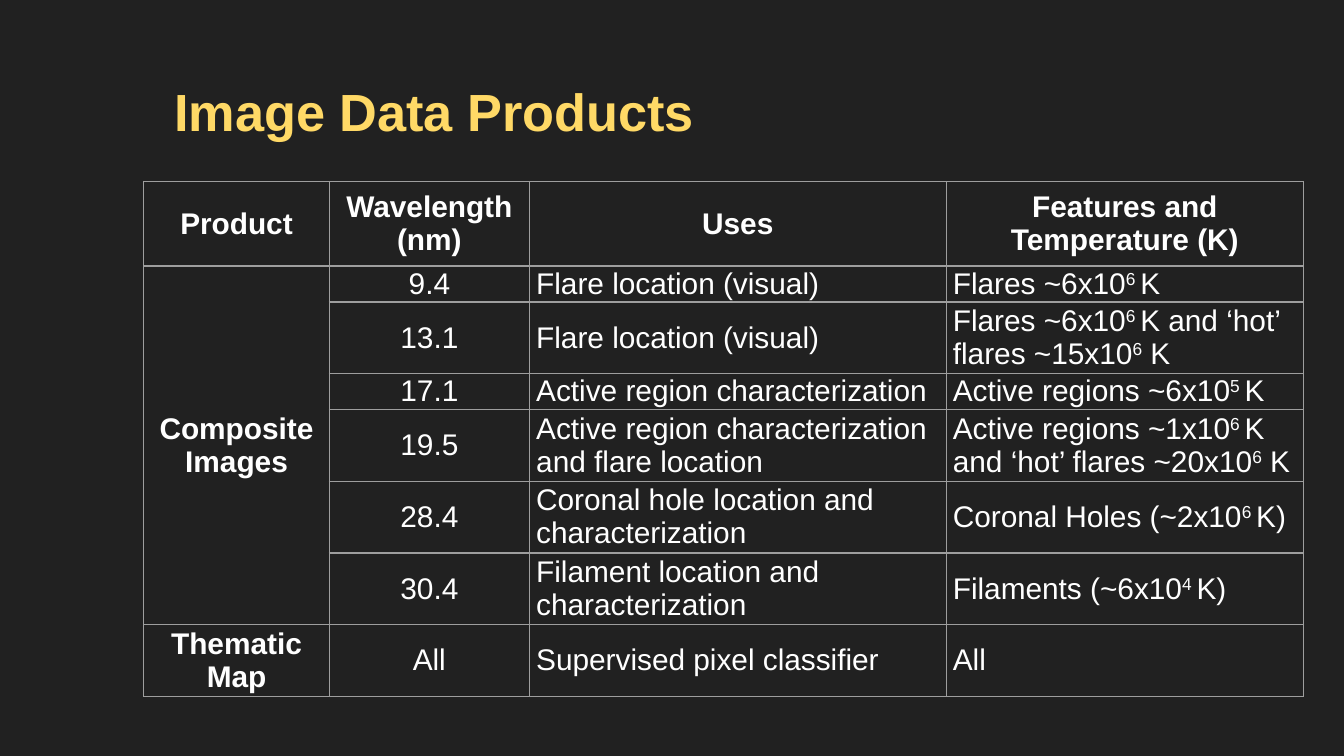
"""Build the slide with the table of image data products."""
from lxml.etree import SubElement, Element
from pptx import Presentation
from pptx.dml.color import RGBColor
from pptx.enum.text import MSO_ANCHOR as Anchor, PP_ALIGN as Align
from pptx.oxml.ns import qn
from pptx.util import Inches, Pt

WHITE, GOLD, DARK, GREY = "FFFFFF", "FFD966", "212121", "9E9E9E"
LINE_HEIGHT = 2.96 / 12
COLUMN_WIDTHS = [1.38, 1.49, 3.1, 2.66]
ROW_LINES = [1, 2, 1, 2, 2, 2, 2]
ROWS = [
    ["Product", "Wavelength\n(nm)", "Uses", "Features and Temperature (K)"],
    ["Composite Images", "9.4", "Flare location (visual)", "Flares ~6x10^6 ^K"],
    ["", "13.1", "Flare location (visual)", "Flares ~6x10^6 ^K and ‘hot’ flares ~15x10^6^ K"],
    ["", "17.1", "Active region characterization", "Active regions ~6x10^5 ^K"],
    ["", "19.5", "Active region characterization and flare location",
     "Active regions ~1x10^6 ^K and ‘hot’ flares ~20x10^6^ K"],
    ["", "28.4", "Coronal hole location and characterization", "Coronal Holes (~2x10^6 ^K)"],
    ["", "30.4", "Filament location and characterization", "Filaments (~6x10^4 ^K)"],
    ["Thematic Map", "All", "Supervised pixel classifier", "All"],
]


def write(paragraph, text, size, color, bold):
    for index, part in enumerate(text.split("^")):
        run = paragraph.add_run()
        run.text = part
        run.font.name, run.font.size, run.font.bold = "Arial", Pt(size), bold
        run.font.color.rgb = RGBColor.from_string(color)
        if index % 2:
            run.font._element.set("baseline", "30000")


def draw_borders(cell, color):
    properties = cell._tc.get_or_add_tcPr()
    for index, side in enumerate(["a:lnL", "a:lnR", "a:lnT", "a:lnB"]):
        border = Element(qn(side), w=str(Pt(0.75)))
        SubElement(SubElement(border, qn("a:solidFill")), qn("a:srgbClr"), val=color)
        properties.insert(index, border)


presentation = Presentation()
presentation.slide_width, presentation.slide_height = Inches(10), Inches(10 * 9 / 16)
slide = presentation.slides.add_slide(presentation.slide_layouts[6])
slide.background.fill.solid()
slide.background.fill.fore_color.rgb = RGBColor.from_string(DARK)

title = slide.shapes.add_textbox(Inches(1.2), Inches(0.49), Inches(8.46), Inches(0.63))
title_frame = title.text_frame
title_frame.word_wrap = True
title_frame.margin_left = title_frame.margin_right = Inches(0.1)
title_frame.margin_top = title_frame.margin_bottom = Inches(0.1)
write(title_frame.paragraphs[0], "Image Data Products", 28, GOLD, True)

row_heights = [0.63] + [lines * LINE_HEIGHT for lines in ROW_LINES]
table = slide.shapes.add_table(
    len(ROWS), len(COLUMN_WIDTHS), Inches(1.07), Inches(1.35),
    Inches(sum(COLUMN_WIDTHS)), Inches(sum(row_heights))).table
table.first_row = table.horz_banding = False
for column, width in zip(table.columns, COLUMN_WIDTHS):
    column.width = Inches(width)
for row, height in zip(table.rows, row_heights):
    row.height = Inches(height)

for row_index, texts in enumerate(ROWS):
    header = row_index == 0
    for column_index, text in enumerate(texts):
        cell = table.cell(row_index, column_index)
        cell.fill.background()
        draw_borders(cell, GREY)
        cell.vertical_anchor = Anchor.MIDDLE
        cell.margin_left = cell.margin_right = Inches(0.1 if header else 0.05)
        cell.margin_top = cell.margin_bottom = 0
        cell.text_frame.text = text
        for paragraph in cell.text_frame.paragraphs:
            line = paragraph.text
            paragraph.clear()
            paragraph.alignment = Align.CENTER if header or column_index < 2 else Align.LEFT
            if line:
                write(paragraph, line, 16, WHITE, header or column_index == 0)
table.cell(1, 0).merge(table.cell(6, 0))

presentation.save("out.pptx")
